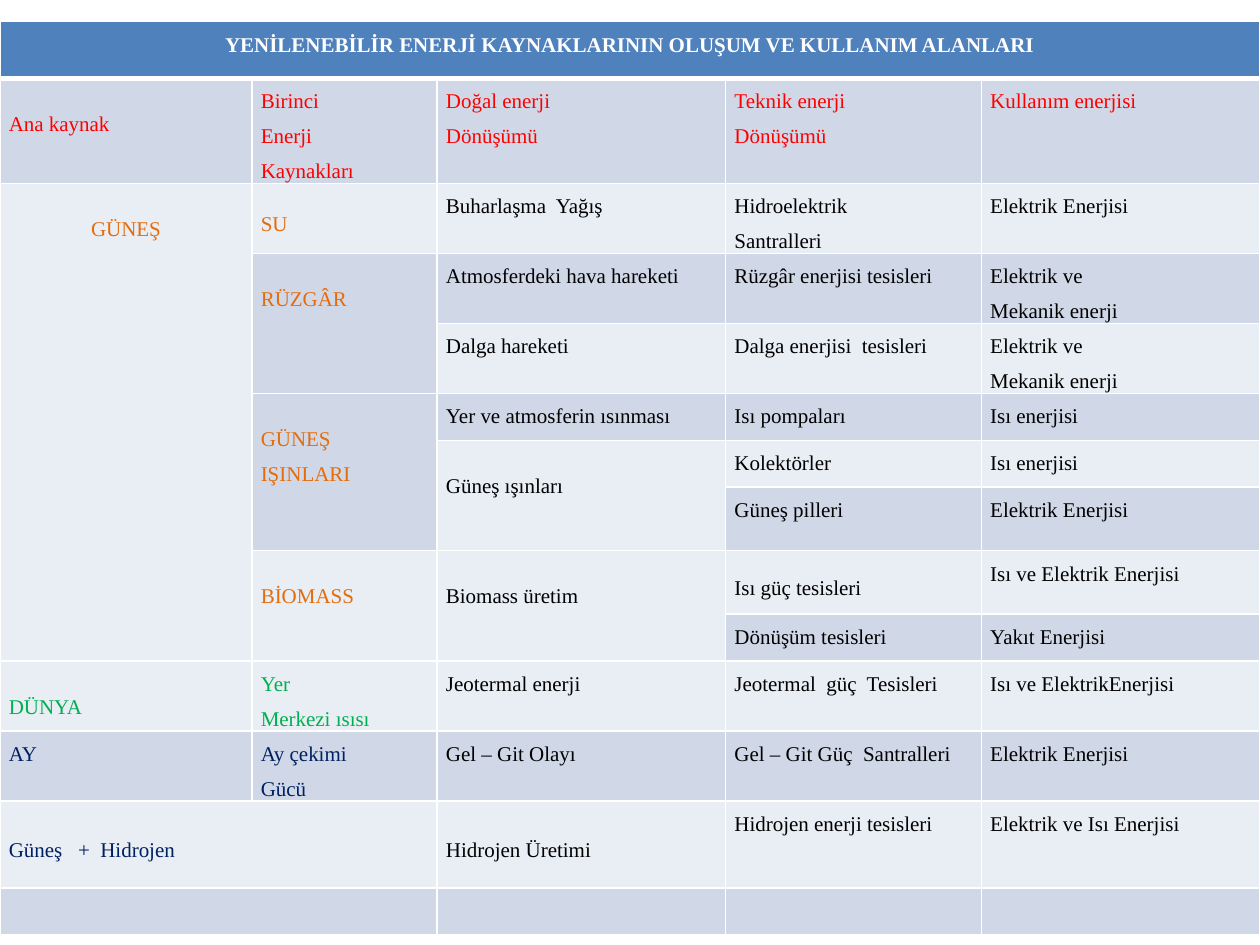
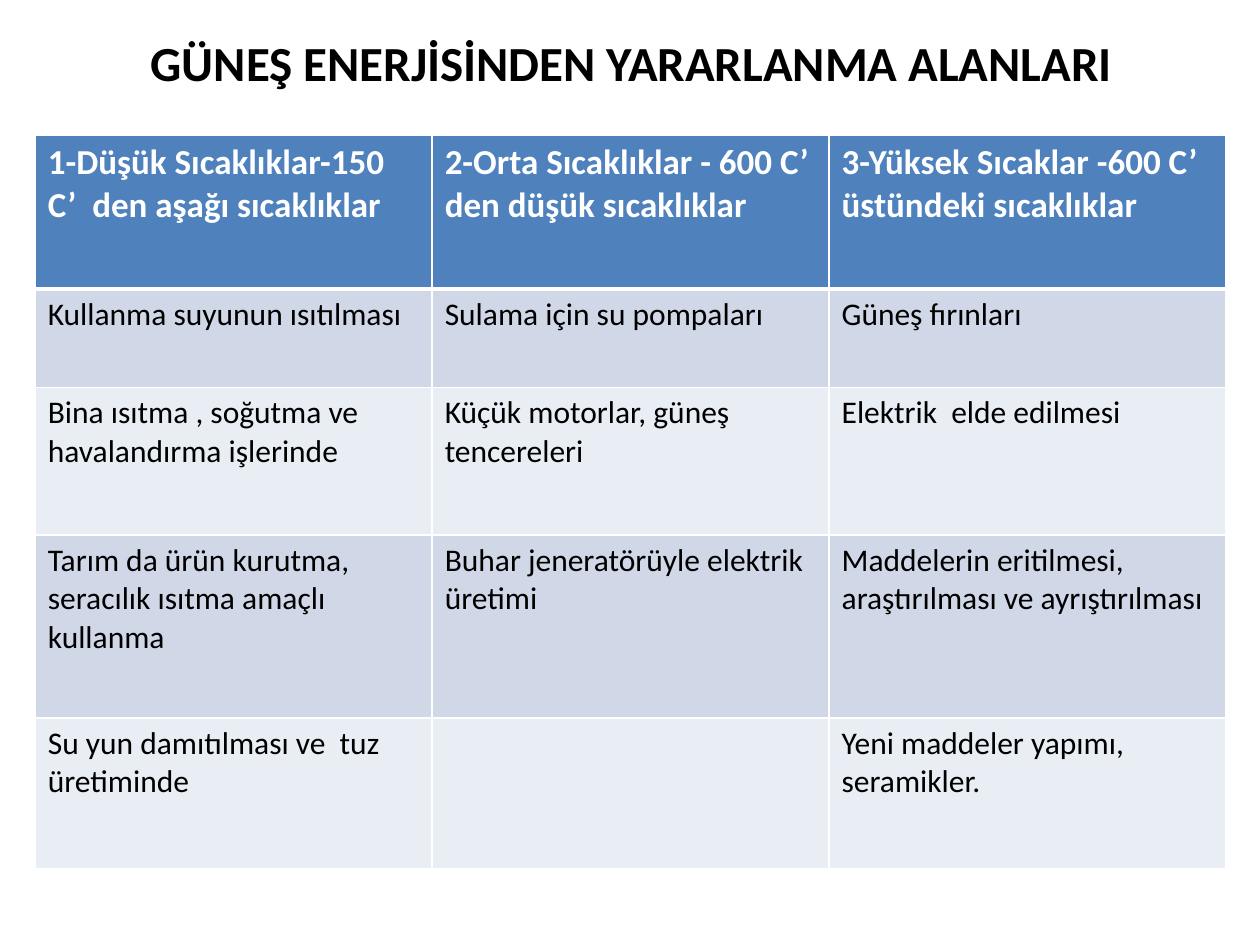
import pptx
import pptx.util
import pptx.dml.color
import pptx.enum.text
import pptx.oxml
import pptx.oxml.ns
from lxml import etree

RGB = pptx.dml.color.RGBColor
Inches, Pt = pptx.util.Inches, pptx.util.Pt
ALIGN, ANCHOR = pptx.enum.text.PP_ALIGN, pptx.enum.text.MSO_ANCHOR

WHITE = RGB(0xFF, 0xFF, 0xFF)
BLACK = RGB(0x00, 0x00, 0x00)
HEADER_BLUE = RGB(0x4F, 0x81, 0xBD)
BANDS = (RGB(0xE9, 0xED, 0xF4), RGB(0xD0, 0xD8, 0xE8))
RED = RGB(0xFF, 0x00, 0x00)
ORANGE = RGB(0xE4, 0x6C, 0x0A)
GREEN = RGB(0x00, 0xB0, 0x50)
NAVY = RGB(0x00, 0x20, 0x60)

WIDTH, HEIGHT = 10, 7.5
SERIF, SANS = "Times New Roman", "Calibri"

SOURCE_ROWS = [
    ["YENİLENEBİLİR ENERJİ KAYNAKLARININ OLUŞUM VE KULLANIM ALANLARI", "", "", "", ""],
    ["Ana kaynak", "Birinci\nEnerji\nKaynakları", "Doğal enerji\nDönüşümü",
     "Teknik enerji\nDönüşümü", "Kullanım enerjisi"],
    ["GÜNEŞ", "SU", "Buharlaşma  Yağış", "Hidroelektrik\nSantralleri", "Elektrik Enerjisi"],
    ["", "RÜZGÂR", "Atmosferdeki hava hareketi", "Rüzgâr enerjisi tesisleri",
     "Elektrik ve\nMekanik enerji"],
    ["", "", "Dalga hareketi", "Dalga enerjisi  tesisleri", "Elektrik ve\nMekanik enerji"],
    ["", "GÜNEŞ\nIŞINLARI", "Yer ve atmosferin ısınması", "Isı pompaları", "Isı enerjisi"],
    ["", "", "Güneş ışınları", "Kolektörler", "Isı enerjisi"],
    ["", "", "", "Güneş pilleri", "Elektrik Enerjisi"],
    ["", "BİOMASS", "Biomass üretim", "Isı güç tesisleri", "Isı ve Elektrik Enerjisi"],
    ["", "", "", "Dönüşüm tesisleri", "Yakıt Enerjisi"],
    ["DÜNYA", "Yer\nMerkezi ısısı", "Jeotermal enerji", "Jeotermal  güç  Tesisleri",
     "Isı ve ElektrikEnerjisi"],
    ["AY", "Ay çekimi\nGücü", "Gel – Git Olayı", "Gel – Git Güç  Santralleri",
     "Elektrik Enerjisi"],
    ["Güneş   +  Hidrojen", "", "Hidrojen Üretimi", "Hidrojen enerji tesisleri",
     "Elektrik ve Isı Enerjisi"],
    ["", "", "", "", ""],
]
SOURCE_COLUMNS = [20, 14.7, 22.9, 20.3, 22.1]
SOURCE_HEIGHTS = [6, 11.1, 7.4, 7.4, 7.4, 4.97, 4.97, 6.72, 6.72, 4.97, 7.4, 7.4, 9.2, 4.97]
SOURCE_SPANS = [(0, 0, 0, 4), (2, 0, 9, 0), (3, 1, 4, 1), (5, 1, 7, 1), (6, 2, 7, 2),
                (8, 1, 9, 1), (8, 2, 9, 2), (12, 0, 12, 1), (13, 0, 13, 1)]
LOWERED = {(1, 0), (2, 0), (3, 1), (5, 1), (6, 2), (8, 1), (8, 2), (10, 0)}
MIDDLE = {(2, 1), (8, 3), (12, 0), (12, 2)}
CENTRED = {(0, 0), (2, 0)}

USE_ROWS = [
    ["1-Düşük Sıcaklıklar-150  C’  den aşağı sıcaklıklar",
     "2-Orta Sıcaklıklar - 600 C’ den düşük sıcaklıklar",
     "3-Yüksek Sıcaklar -600 C’ üstündeki sıcaklıklar"],
    ["Kullanma suyunun ısıtılması", "Sulama için su pompaları", "Güneş fırınları"],
    ["Bina ısıtma , soğutma ve havalandırma işlerinde",
     "Küçük motorlar, güneş tencereleri", "Elektrik  elde edilmesi"],
    ["Tarım da ürün kurutma, seracılık ısıtma amaçlı kullanma",
     "Buhar jeneratörüyle elektrik üretimi",
     "Maddelerin eritilmesi, araştırılması ve ayrıştırılması"],
    ["Su yun damıtılması ve  tuz üretiminde", "", "Yeni maddeler yapımı, seramikler."],
]
USE_COLUMNS = [31.5] * 3
USE_HEIGHTS = [16.3, 10.4, 15.6, 19.4, 15.9]


def across(percent):
    """Return a share of the slide's width."""
    return Inches(WIDTH * percent / 100)


def down(percent):
    """Return a share of the slide's height."""
    return Inches(HEIGHT * percent / 100)


def write(tf, text, font, size, color, bold=False, align=ALIGN.LEFT, spacing=None):
    """Write each line of text as one paragraph with one run."""
    for i, line in enumerate(text.split("\n")):
        p = tf.paragraphs[0] if i == 0 else tf.add_paragraph()
        p.alignment = align
        p.line_spacing = spacing
        r = p.add_run()
        r.text = line
        r.font.name, r.font.size, r.font.bold = font, Pt(size), bold
        r.font.color.rgb = color


def set_borders(cell, top, bottom):
    """Give a cell white borders, with top and bottom widths in points."""
    tc_pr = cell._tc.get_or_add_tcPr()
    for side, width in (("L", 1), ("R", 1), ("T", top), ("B", bottom)):
        ln = etree.SubElement(tc_pr, pptx.oxml.ns.qn("a:ln" + side), w=str(Pt(width)))
        fill = etree.SubElement(ln, pptx.oxml.ns.qn("a:solidFill"))
        etree.SubElement(fill, pptx.oxml.ns.qn("a:srgbClr"), val=str(WHITE))


def add_banded_table(s, left, top, columns, heights):
    """Add a table with a blue header row, alternating bands and white borders."""
    frame = s.shapes.add_table(len(heights), len(columns), across(left), down(top),
                               across(sum(columns)), down(sum(heights)))
    table = frame.table
    for column, width in zip(table.columns, columns):
        column.width = across(width)
    for i, (row, height) in enumerate(zip(table.rows, heights)):
        row.height = down(height)
        for cell in row.cells:
            set_borders(cell, 3 if i == 1 else 1, 3 if i == 0 else 1)
            cell.fill.solid()
            cell.fill.fore_color.rgb = BANDS[i % 2] if i else HEADER_BLUE
    return table


def source_color(row, column):
    """Return the text colour of a cell in the energy source table."""
    if row < 2:
        return (WHITE, RED)[row]
    if column > 1:
        return BLACK
    return ORANGE if row < 10 else GREEN if row == 10 else NAVY


def add_source_slide(prs):
    """Add the slide on renewable sources and their uses."""
    s = prs.slides.add_slide(prs.slide_layouts[6])
    table = add_banded_table(s, 0, 2.3, SOURCE_COLUMNS, SOURCE_HEIGHTS)
    for r1, c1, r2, c2 in SOURCE_SPANS:
        table.cell(r1, c1).merge(table.cell(r2, c2))
    for i, row in enumerate(SOURCE_ROWS):
        for j, text in enumerate(row):
            cell, place = table.cell(i, j), (i, j)
            cell.margin_left = cell.margin_right = Inches(0.07)
            cell.margin_top = Inches(0.18 if place in LOWERED else 0)
            cell.margin_bottom = 0
            cell.vertical_anchor = ANCHOR.MIDDLE if place in MIDDLE else ANCHOR.TOP
            if text:
                write(cell.text_frame, text, SERIF, 12, source_color(i, j), i == 0,
                      ALIGN.CENTER if place in CENTRED else ALIGN.LEFT, 1.5)


def add_use_slide(prs):
    """Add the slide on the uses of solar energy."""
    s = prs.slides.add_slide(prs.slide_layouts[6])
    tf = s.shapes.add_textbox(across(5.1), 0, across(90), down(13.2)).text_frame
    tf.word_wrap = True
    tf.vertical_anchor = ANCHOR.MIDDLE
    write(tf, "GÜNEŞ ENERJİSİNDEN YARARLANMA ALANLARI", SANS, 28, BLACK, True, ALIGN.CENTER)
    table = add_banded_table(s, 2.8, 14.3, USE_COLUMNS, USE_HEIGHTS)
    for i, row in enumerate(USE_ROWS):
        size, color = (18, BLACK) if i else (20, WHITE)
        for j, text in enumerate(row):
            if text:
                write(table.cell(i, j).text_frame, text, SANS, size, color, i == 0)


def main():
    """Build the two slides and save them."""
    prs = pptx.Presentation()
    prs.slide_width, prs.slide_height = Inches(WIDTH), Inches(HEIGHT)
    add_source_slide(prs)
    add_use_slide(prs)
    prs.save("out.pptx")


if __name__ == "__main__":
    main()
